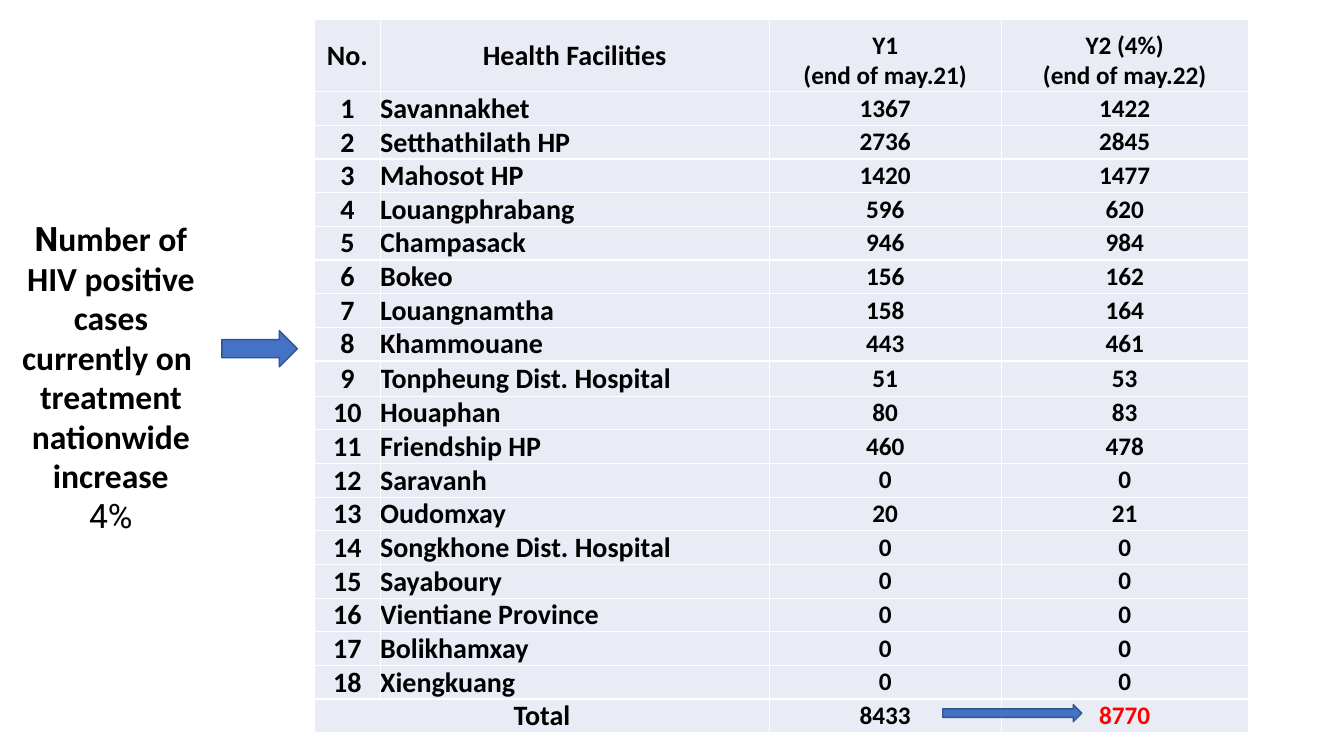
import lxml.etree
import pptx
import pptx.dml.color
import pptx.enum.shapes
import pptx.enum.text
import pptx.oxml.ns
import pptx.util

Inches = pptx.util.Inches
Pt = pptx.util.Pt
ALIGN = pptx.enum.text.PP_ALIGN
ANCHOR = pptx.enum.text.MSO_ANCHOR

COLORS = {
    "text": "000000",
    "highlight": "FF0000",
    "cell": "E9EBF5",
    "border": "FFFFFF",
    "arrow": "4472C4",
    "arrow_line": "325491",
}

TITLE = [
    ("N", "Roboto", True),
    ("umber of HIV positive cases currently on ", "Calibri", True),
    ("\n", "Calibri", True),
    ("treatment nationwide increase", "Calibri", True),
    ("\n", "Calibri", True),
    ("4%", "Roboto", False),
]

HEADER = ["No.", "Health Facilities", "Y1\v(end of may.21)", "Y2 (4%)\v(end of may.22)"]
FACILITIES = [
    ("Savannakhet", 1367, 1422),
    ("Setthathilath HP", 2736, 2845),
    ("Mahosot HP", 1420, 1477),
    ("Louangphrabang", 596, 620),
    ("Champasack", 946, 984),
    ("Bokeo", 156, 162),
    ("Louangnamtha", 158, 164),
    ("Khammouane", 443, 461),
    ("Tonpheung Dist. Hospital", 51, 53),
    ("Houaphan", 80, 83),
    ("Friendship HP", 460, 478),
    ("Saravanh", 0, 0),
    ("Oudomxay", 20, 21),
    ("Songkhone Dist. Hospital", 0, 0),
    ("Sayaboury", 0, 0),
    ("Vientiane Province", 0, 0),
    ("Bolikhamxay", 0, 0),
    ("Xiengkuang", 0, 0),
]
TOTAL = ["Total", "", 8433, 8770]
COLUMN_WIDTHS = [0.65, 3.86, 2.3, 2.45]
ROW_HEIGHTS = [0.72] + [0.33] * 8 + [0.35] + [0.33] * 10


class SlideBuilder:
    def __init__(self, slide):
        self.slide = slide

    def color(self, name):
        return pptx.dml.color.RGBColor.from_string(COLORS[name])

    def style_font(self, font, size, name="Calibri", bold=True, color="text"):
        font.name = name
        font.size = Pt(size)
        font.bold = bold
        font.color.rgb = self.color(color)

    def title(self, left, top, width, height, pieces):
        box = self.slide.shapes.add_textbox(
            Inches(left), Inches(top), Inches(width), Inches(height))
        frame = box.text_frame
        frame.word_wrap = True
        frame.vertical_anchor = ANCHOR.MIDDLE
        paragraph = frame.paragraphs[0]
        paragraph.alignment = ALIGN.CENTER
        paragraph.line_spacing = 0.98
        self.style_font(paragraph.font, 24)
        for text, font_name, bold in pieces:
            if text == "\n":
                paragraph.add_line_break()
                continue
            run = paragraph.add_run()
            run.text = text
            self.style_font(run.font, 24, font_name, bold)

    def border(self, cell):
        properties = cell._tc.get_or_add_tcPr()
        for side in ("lnL", "lnR", "lnT", "lnB"):
            line = lxml.etree.SubElement(
                properties, pptx.oxml.ns.qn(f"a:{side}"), w=str(Pt(1)))
            fill = lxml.etree.SubElement(line, pptx.oxml.ns.qn("a:solidFill"))
            lxml.etree.SubElement(
                fill, pptx.oxml.ns.qn("a:srgbClr"), val=COLORS["border"])

    def cell(self, cell, text, size, alignment, anchor, color="text"):
        self.border(cell)
        cell.fill.solid()
        cell.fill.fore_color.rgb = self.color("cell")
        cell.margin_left = cell.margin_right = cell.margin_top = cell.margin_bottom = 0
        cell.vertical_anchor = anchor
        cell.text_frame.text = str(text)
        paragraph = cell.text_frame.paragraphs[0]
        paragraph.alignment = alignment
        self.style_font(paragraph.font, size)
        for run in paragraph.runs:
            self.style_font(run.font, size, color=color)

    def facility_table(self, left, top):
        rows = [HEADER]
        rows += [(number, *facility) for number, facility in enumerate(FACILITIES, 1)]
        rows.append(TOTAL)
        last = len(rows) - 1
        table = self.slide.shapes.add_table(
            len(rows), len(HEADER), Inches(left), Inches(top),
            Inches(sum(COLUMN_WIDTHS)), Inches(sum(ROW_HEIGHTS))).table
        table.first_row = table.horz_banding = False
        for column, width in zip(table.columns, COLUMN_WIDTHS):
            column.width = Inches(width)
        for row, height in zip(table.rows, ROW_HEIGHTS):
            row.height = Inches(height)
        for r, row in enumerate(rows):
            for c, value in enumerate(row):
                is_body = 0 < r < last
                is_count = c >= 2
                is_bottom = is_body != is_count if r < last else False
                self.cell(
                    table.cell(r, c), value,
                    size=18 if is_count else 20,
                    alignment=ALIGN.LEFT if is_body and c == 1 else ALIGN.CENTER,
                    anchor=ANCHOR.BOTTOM if is_bottom else ANCHOR.MIDDLE,
                    color="highlight" if (r, c) == (last, 3) else "text")
        table.cell(last, 0).merge(table.cell(last, 1))

    def right_arrow(self, left, top, width, height):
        shape = self.slide.shapes.add_shape(
            pptx.enum.shapes.MSO_SHAPE.RIGHT_ARROW,
            Inches(left), Inches(top), Inches(width), Inches(height))
        shape.shadow.inherit = False
        shape.fill.solid()
        shape.fill.fore_color.rgb = self.color("arrow")
        shape.line.color.rgb = self.color("arrow_line")
        shape.line.width = Pt(1)


def main():
    presentation = pptx.Presentation()
    presentation.slide_width = Inches(13.33)
    presentation.slide_height = Inches(7.5)
    builder = SlideBuilder(presentation.slides.add_slide(presentation.slide_layouts[6]))
    builder.title(0, 0.34, 2.2, 6.82, TITLE)
    builder.facility_table(3.12, 0.19)
    builder.right_arrow(2.2, 3.28, 0.75, 0.36)
    builder.right_arrow(9.35, 6.99, 1.38, 0.17)
    presentation.save("out.pptx")


if __name__ == "__main__":
    main()
